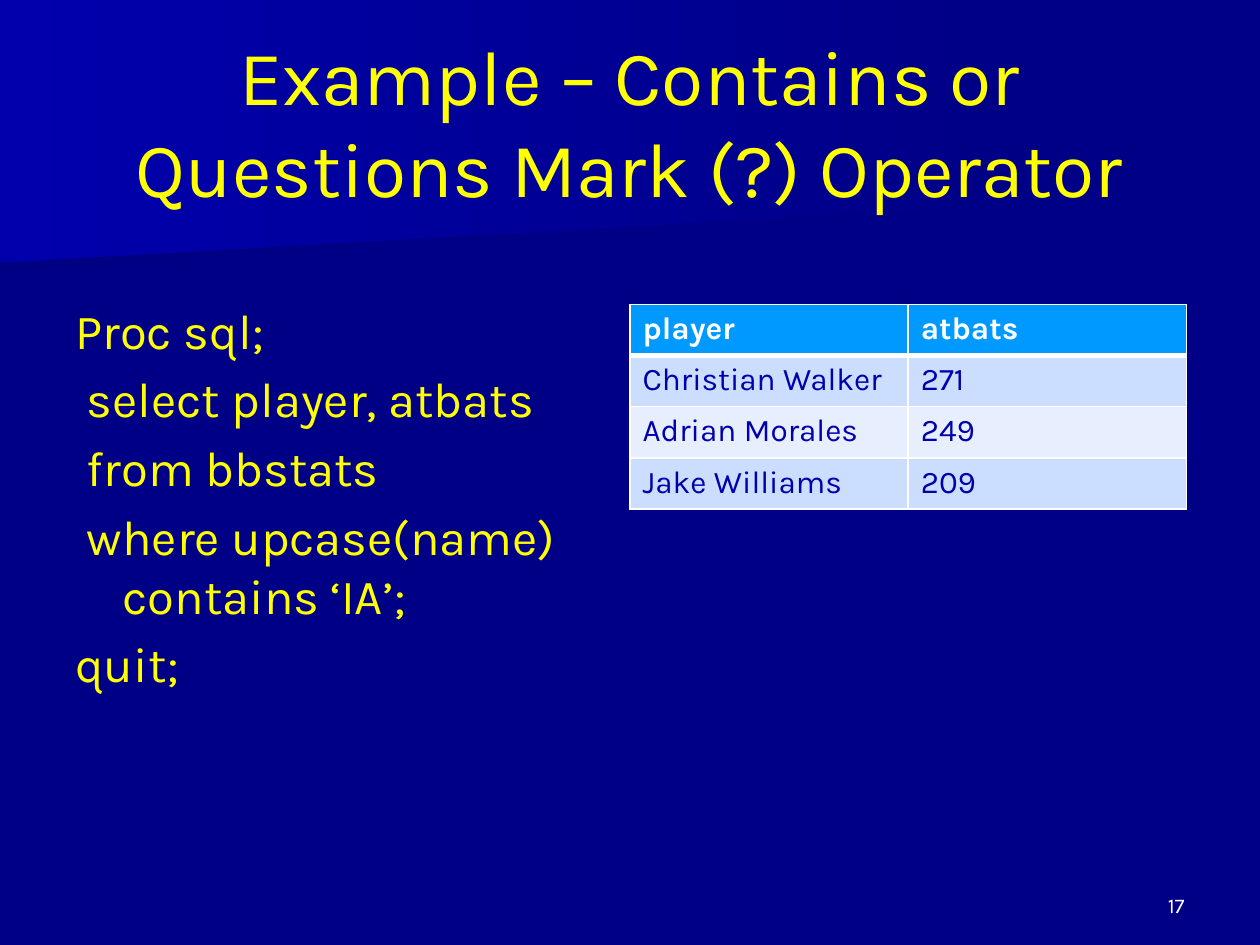
from pptx import Presentation
from pptx.dml.color import RGBColor as RGB
from pptx.enum.text import MSO_ANCHOR as Anchor, MSO_AUTO_SIZE as Auto, PP_ALIGN as Align
from pptx.oxml import parse_xml
from pptx.oxml.ns import nsdecls
from pptx.util import Pt

FONT = "Karla"
NAVY, BLUE, YELLOW, WHITE = "000086", "0000AC", "FFFF00", "FFFFFF"
HEAD, BANDS = "0099FF", ("CBDEFF", "E7EFFF")
CODE = (
    "Proc sql;",
    " select player, atbats",
    " from bbstats",
    " where upcase(name) contains ‘IA’;",
    "quit;",
)
ROWS = (
    ("player", "atbats"),
    ("Christian Walker", "271"),
    ("Adrian Morales", "249"),
    ("Jake Williams", "209"),
)


def paint(color, tone):
    color.rgb = RGB.from_string(tone)


def fill(item, tone):
    item.fill.solid()
    paint(item.fill.fore_color, tone)


def write(para, text, size, tone, bold=False, align=Align.LEFT):
    para.alignment = align
    run = para.add_run()
    run.text = text
    run.font.name = FONT
    run.font.size = Pt(size)
    run.font.bold = bold
    paint(run.font.color, tone)


def add_sweep(slide, points, start, end):
    pen = slide.shapes.build_freeform(*points[0], scale=Pt(1))
    pen.add_line_segments(points[1:], close=True)
    shape = pen.convert_to_shape()
    shape.shadow.inherit = False
    shape.line.fill.background()
    shape.fill.gradient()
    shape.fill.gradient_angle = 0
    for stop, tone in zip(shape.fill.gradient_stops, (start, end)):
        paint(stop.color, tone)


def set_title(slide, text):
    title = slide.shapes.title
    title.element.getparent().append(title.element)
    title.left, title.top, title.width, title.height = Pt(36), Pt(24), Pt(648), Pt(90)
    frame = title.text_frame
    frame.word_wrap = True
    frame.auto_size = Auto.NONE
    frame.vertical_anchor = Anchor.MIDDLE
    write(frame.paragraphs[0], text, 44, YELLOW, align=Align.CENTER)


def add_box(slide, left, top, width, height, anchor=Anchor.TOP):
    box = slide.shapes.add_textbox(Pt(left), Pt(top), Pt(width), Pt(height))
    frame = box.text_frame
    frame.word_wrap = True
    frame.vertical_anchor = anchor
    return frame


def add_code(slide, lines):
    frame = add_box(slide, 36, 168, 318, 312)
    for i, line in enumerate(lines):
        para = frame.add_paragraph() if i else frame.paragraphs[0]
        props = para._p.get_or_add_pPr()
        props.set("marL", str(Pt(27)))
        props.set("indent", str(Pt(-27)))
        if i:
            para.space_before = Pt(5.6)
        write(para, line, 28, YELLOW)


def add_edges(cell, top, bottom):
    props = cell._tc.get_or_add_tcPr()
    for side, width in (("L", 1), ("R", 1), ("T", top), ("B", bottom)):
        props.append(parse_xml(
            f'<a:ln{side} {nsdecls("a")} w="{Pt(width)}"><a:solidFill>'
            f'<a:srgbClr val="{WHITE}"/></a:solidFill></a:ln{side}>'
        ))


def add_grid(slide, rows):
    frame = slide.shapes.add_table(
        len(rows), len(rows[0]), Pt(360), Pt(174), Pt(318), Pt(116.8))
    for i, row in enumerate(rows):
        head = i == 0
        for j, text in enumerate(row):
            cell = frame.table.cell(i, j)
            add_edges(cell, 3 if i == 1 else 1, 3 if head else 1)
            fill(cell, HEAD if head else BANDS[(i - 1) % 2])
            write(cell.text_frame.paragraphs[0], text, 18,
                  WHITE if head else BLUE, bold=head)


def main():
    deck = Presentation()
    deck.slide_width, deck.slide_height = Pt(720), Pt(540)
    slide = deck.slides.add_slide(deck.slide_layouts[5])
    fill(slide.background, NAVY)
    add_sweep(slide, [(560, 110), (0, 156), (0, 73), (561, 73)], "000083", NAVY)
    add_sweep(slide, [(570, 117), (0, 150), (0, 0), (570, 0)], BLUE, NAVY)
    set_title(slide, "Example – Contains or Questions Mark (?) Operator")
    add_code(slide, CODE)
    add_grid(slide, ROWS)
    page = add_box(slide, 516, 492, 168, 36, Anchor.BOTTOM)
    write(page.paragraphs[0], "17", 12, WHITE, align=Align.RIGHT)
    deck.save("out.pptx")


if __name__ == "__main__":
    main()
